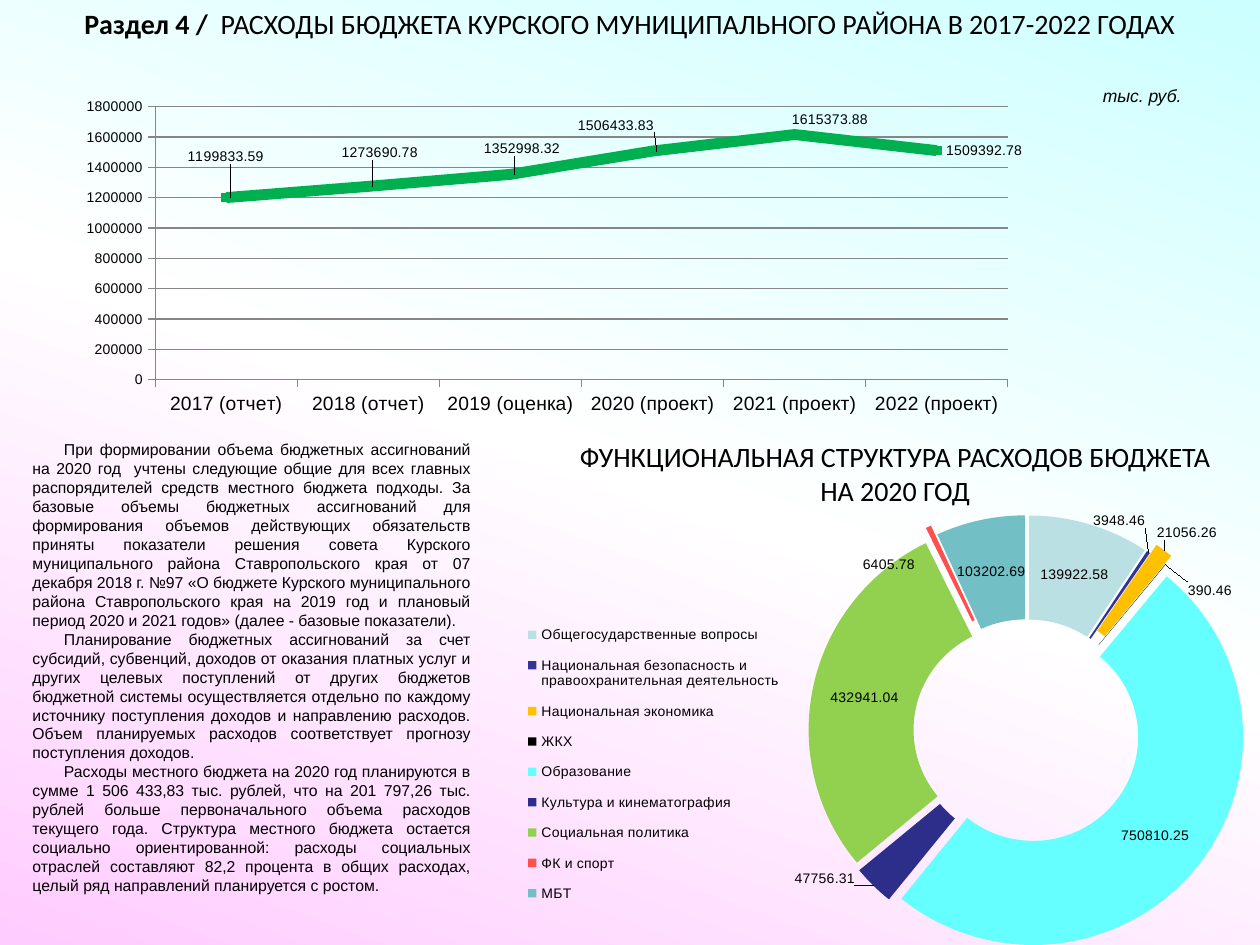
from copy import deepcopy

from lxml import etree
from pptx import Presentation, util as u
from pptx.chart.data import CategoryChartData
from pptx.dml.color import RGBColor
from pptx.enum import chart as ch, text
from pptx.oxml.ns import qn

color = RGBColor.from_string


def place(left, top, width, height):
    shares = zip((left, top, width, height), (deck.slide_width, deck.slide_height) * 2)
    return [u.Emu(int(share * side / 100)) for share, side in shares]


def set_layout(parent, index, values, modes=()):
    for old in parent.findall(qn("c:layout")):
        parent.remove(old)
    layout = etree.Element(qn("c:layout"))
    manual = etree.SubElement(layout, qn("c:manualLayout"))
    for tag, value in (*modes, *zip("xywh", values)):
        etree.SubElement(manual, qn(f"c:{tag}")).set("val", str(value))
    parent.insert(index, layout)


deck = Presentation()
deck.slide_width, deck.slide_height = u.Inches(10), u.Inches(7.5)
slide = deck.slides.add_slide(deck.slide_layouts[6])
edge = (("xMode", "edge"), ("yMode", "edge"))
inner = (("layoutTarget", "inner"), *edge)

background = slide.background.fill
background.gradient()
background.gradient_angle = 250
stop_list = slide.background._cSld.find(".//" + qn("a:gsLst"))
stop_list.append(deepcopy(stop_list[-1]))
for stop, shade, position in zip(background.gradient_stops, ("CCFFFF", "FFFFFF", "FFCCFF"), (0, 0.5, 1)):
    stop.color.rgb = color(shade)
    stop.position = position

budget_notes = [
    "При формировании объема бюджетных ассигнований на 2020 год  учтены следующие общие для всех главных "
    "распорядителей средств местного бюджета подходы. За базовые объемы бюджетных ассигнований для формирования "
    "объемов действующих обязательств приняты показатели решения совета Курского муниципального района "
    "Ставропольского края от 07 декабря 2018 г. №97 «О бюджете Курского муниципального района Ставропольского "
    "края на 2019 год и плановый период 2020 и 2021 годов» (далее - базовые показатели).",
    "Планирование бюджетных ассигнований за счет субсидий, субвенций, доходов от оказания платных услуг и других "
    "целевых поступлений от других бюджетов бюджетной системы осуществляется отдельно по каждому источнику "
    "поступления доходов и направлению расходов. Объем планируемых расходов соответствует прогнозу поступления "
    "доходов.",
    "Расходы местного бюджета на 2020 год планируются в сумме 1 506 433,83 тыс. рублей, что на 201 797,26 тыс. "
    "рублей больше первоначального объема расходов текущего года. Структура местного бюджета остается социально "
    "ориентированной: расходы социальных отраслей составляют 82,2 процента в общих расходах, целый ряд "
    "направлений планируется с ростом.",
]
center, justify = text.PP_ALIGN.CENTER, text.PP_ALIGN.JUSTIFY
heading = [("Раздел 4 /  ", True), ("РАСХОДЫ БЮДЖЕТА КУРСКОГО МУНИЦИПАЛЬНОГО РАЙОНА В 2017-2022 ГОДАХ", False)]
structure_title = "ФУНКЦИОНАЛЬНАЯ СТРУКТУРА РАСХОДОВ БЮДЖЕТА НА 2020 ГОД"
passages = [
    ((0, 0, 100, 4.9), [heading], "Calibri", 16, center, False),
    ((1.6, 45.9, 36.7, 51.9), [[(note, False)] for note in budget_notes], "Arial", 9, justify, False),
    ((43.7, 45.9, 54.7, 8.5), [[(structure_title, False)]], "Calibri", 16, center, False),
    ((82.8, 8.3, 15.7, 3.6), [[("тыс. руб.", False)]], "Arial", 10, center, True),
]
for area, paragraphs, face, size, alignment, italic in passages:
    frame = slide.shapes.add_textbox(*place(*area)).text_frame
    frame.word_wrap = True
    for number, pieces in enumerate(paragraphs):
        paragraph = frame.add_paragraph() if number else frame.paragraphs[0]
        paragraph.alignment = alignment
        font = paragraph.font
        font.name, font.size, font.italic = face, u.Pt(size), italic
        font.color.rgb = color("000000")
        if alignment == justify:
            paragraph._p.get_or_add_pPr().set("indent", str(u.Inches(0.25)))
        for words, bold in pieces:
            run = paragraph.add_run()
            run.text, run.font.bold = words, bold

yearly = {
    "2017 (отчет)": 1199833.59, "2018 (отчет)": 1273690.78, "2019 (оценка)": 1352998.32,
    "2020 (проект)": 1506433.83, "2021 (проект)": 1615373.88, "2022 (проект)": 1509392.78,
}
functional = {
    "Общегосударственные вопросы": 139922.58,
    "Национальная безопасность и правоохранительная деятельность": 3948.46,
    "Национальная экономика": 21056.26,
    "ЖКХ": 390.46,
    "Образование": 750810.25,
    "Культура и кинематография": 47756.31,
    "Социальная политика": 432941.04,
    "ФК и спорт": 6405.78,
    "МБТ": 103202.69,
}
yearly_shifts = {0: (-0.04, -0.11), 1: (-0.03, -0.09), 2: (-0.03, -0.07), 3: (-0.07, -0.07), 4: (-0.01, -0.04)}
functional_shifts = {1: (0, -0.15), 2: (0.07, -0.12), 3: (0.1, -0.03), 5: (-0.11, 0.06), 7: (-0.08, -0.02)}
diagrams = [
    (ch.XL_CHART_TYPE.LINE_MARKERS, (4.7, 9.3, 95.3, 39.6), yearly, (0.08, 0.05, 0.71, 0.73), yearly_shifts),
    (ch.XL_CHART_TYPE.DOUGHNUT, (38.3, 46.9, 61.7, 53.1), functional, (0.43, 0.16, 0.54, 0.84), functional_shifts),
]
charts = []
for kind, area, amounts, plot_area, shifts in diagrams:
    data = CategoryChartData()
    data.categories = list(amounts)
    data.add_series("Расходы", list(amounts.values()))
    chart = slide.shapes.add_chart(kind, *place(*area), data).chart
    chart.has_title = chart.has_legend = False
    chart.font.name, chart.font.size = "Arial", u.Pt(8)
    chart.font.color.rgb = color("000000")
    set_layout(chart._chartSpace.find(".//" + qn("c:plotArea")), 0, plot_area, inner)
    chart.plots[0].vary_by_categories = kind == ch.XL_CHART_TYPE.DOUGHNUT
    series = chart.plots[0].series[0]
    series.data_labels.show_value = True
    series.data_labels.font.size = u.Pt(8)
    for number in shifts:
        series.points[number].data_label.font.size = u.Pt(8)
    for label, shift in zip(series._element.findall(".//" + qn("c:dLbl")), shifts.values()):
        set_layout(label, 1, shift)
    charts.append(chart)
trend, structure = charts

trend_series = trend.plots[0].series[0]
trend_series.smooth = False
trend_series.format.line.color.rgb = color("00B050")
trend_series.format.line.width = u.Pt(6.25)
marker = trend_series.marker
marker.style, marker.size = ch.XL_MARKER_STYLE.SQUARE, 5
marker.format.fill.solid()
marker.format.fill.fore_color.rgb = color("00B050")
marker.format.line.color.rgb = color("00B050")
amount_axis, year_axis = trend.value_axis, trend.category_axis
amount_axis.minimum_scale, amount_axis.maximum_scale, amount_axis.major_unit = 0, 1800000, 200000
amount_axis.has_major_gridlines = True
year_axis.tick_labels.font.size = u.Pt(11)
for ruled in (amount_axis, year_axis, amount_axis.major_gridlines):
    ruled.format.line.color.rgb = color("868686")

structure.has_legend = True
structure.legend.position = ch.XL_LEGEND_POSITION.RIGHT
structure.legend.include_in_layout = False
structure.legend.font.size = u.Pt(8)
set_layout(structure.legend._element, 1, (0.04, 0.34, 0.36, 0.61), edge)
shades = ["BBE0E3", "333399", "FFC000", "000000", "66FFFF", "2D2D8A", "92D050", "FF5050", "72BFC5"]
for number, shade in enumerate(shades):
    sector = structure.plots[0].series[0].points[number].format
    sector.fill.solid()
    sector.fill.fore_color.rgb = color(shade)
    sector.line.fill.background()
for number, sector in enumerate(structure.plots[0].series[0]._element.findall(qn("c:dPt"))):
    explosion = etree.Element(qn("c:explosion"))
    explosion.set("val", "18" if number in (2, 7) else "8")
    sector.insert(1, explosion)

deck.save("out.pptx")
